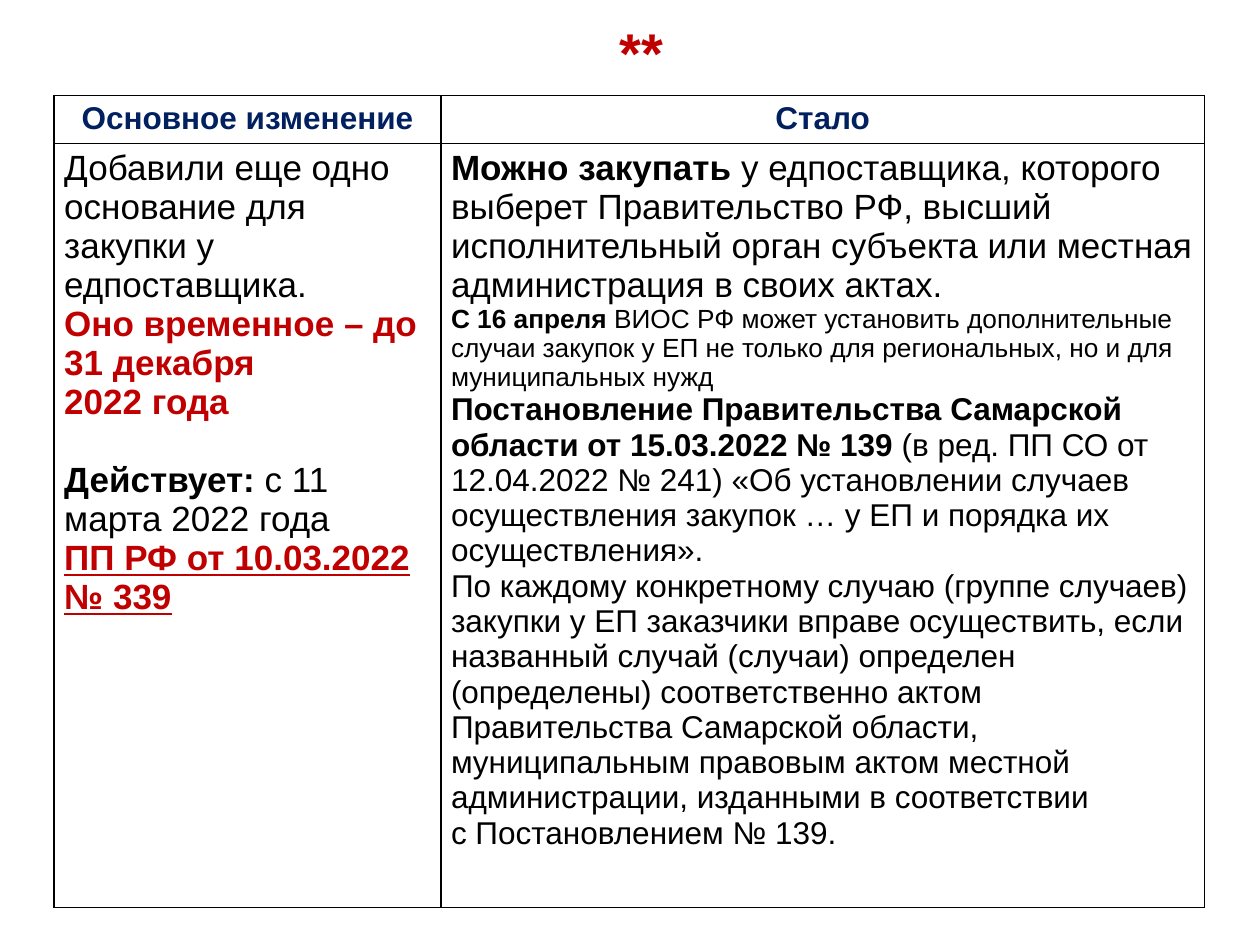
import pptx
import pptx.dml.color
import pptx.enum.text
import pptx.oxml
import pptx.oxml.ns
import pptx.util
from dataclasses import dataclass

Inches = pptx.util.Inches
Pt = pptx.util.Pt
ALIGN = pptx.enum.text.PP_ALIGN
ANCHOR = pptx.enum.text.MSO_ANCHOR


@dataclass(frozen=True)
class Theme:
    font: str = "Arial"
    red: str = "C00000"
    navy: str = "002060"
    black: str = "000000"
    white: str = "FFFFFF"
    title: int = 32
    large: int = 20
    medium: int = 18
    small: int = 15
    border: int = 1


THEME = Theme()


def span(text, size=THEME.large, color=THEME.black, bold=False, underline=False):
    return text, size, color, bold, underline


class Page:
    def __init__(self, deck, theme):
        self.theme = theme
        self.slide = deck.slides.add_slide(deck.slide_layouts[6])

    def add_text(self, frame, paras, align=ALIGN.LEFT, gaps=None):
        """Fill a frame; gaps maps a paragraph index to the points above it."""
        for index, spans in enumerate(paras):
            para = frame.paragraphs[0] if index == 0 else frame.add_paragraph()
            para.alignment = align
            if gaps and index in gaps:
                para.space_before = Pt(gaps[index])
            for text, size, color, bold, underline in spans:
                for number, line in enumerate(text.split("\n")):
                    if number:
                        para.add_line_break()
                    run = para.add_run()
                    run.text = line
                    font = run.font
                    font.name, font.size = self.theme.font, Pt(size)
                    font.bold, font.underline = bold, underline
                    font.color.rgb = pptx.dml.color.RGBColor.from_string(color)

    def text_box(self, left, top, width, height, paras, align):
        box = self.slide.shapes.add_textbox(
            Inches(left), Inches(top), Inches(width), Inches(height))
        frame = box.text_frame
        frame.word_wrap = True
        frame.vertical_anchor = ANCHOR.MIDDLE
        frame.margin_top = frame.margin_bottom = 0
        self.add_text(frame, paras, align)

    def table(self, left, top, widths, heights):
        frame = self.slide.shapes.add_table(
            len(heights), len(widths), Inches(left), Inches(top),
            Inches(sum(widths)), Inches(sum(heights)))
        table = frame.table
        table.first_row = table.horz_banding = False
        for column, width in zip(table.columns, widths):
            column.width = Inches(width)
        for row, height in zip(table.rows, heights):
            row.height = Inches(height)
        return table

    def cell(self, cell, paras, align=ALIGN.LEFT, gaps=None):
        cell.margin_left = cell.margin_right = Inches(0.08)
        cell.margin_top = cell.margin_bottom = Inches(0.04)
        # Borders come before the fill in the cell properties
        properties = cell._tc.get_or_add_tcPr()
        for side in ("lnL", "lnR", "lnT", "lnB"):
            properties.append(pptx.oxml.parse_xml(
                f'<a:{side} {pptx.oxml.ns.nsdecls("a")} w="{Pt(self.theme.border)}">'
                f'<a:solidFill><a:srgbClr val="{self.theme.black}"/></a:solidFill>'
                f'</a:{side}>'))
        cell.fill.solid()
        cell.fill.fore_color.rgb = pptx.dml.color.RGBColor.from_string(self.theme.white)
        self.add_text(cell.text_frame, paras, align, gaps)


def main():
    deck = pptx.Presentation()
    deck.slide_width, deck.slide_height = Inches(10), Inches(7.5)
    page = Page(deck, THEME)

    # Title
    page.text_box(0.59, 0.21, 9, 0.39,
                  [[span("**", THEME.title, THEME.red, True)]], ALIGN.CENTER)

    # Table with its header row
    table = page.table(0.43, 0.76, [3.07, 6.06], [0.36, 5.64])
    for column, heading in enumerate(("Основное изменение", "Стало")):
        page.cell(table.cell(0, column),
                  [[span(heading, THEME.medium, THEME.navy, True)]], ALIGN.CENTER)

    # What was changed
    change = [
        [span("Добавили еще одно основание для закупки у едпоставщика.")],
        [span("Оно временное – до 31 декабря", color=THEME.red, bold=True)],
        [span("2022 года", color=THEME.red, bold=True)],
        [span("Действует: ", bold=True), span("с 11 марта 2022 года")],
        [span("ПП РФ от 10.03.2022 № 339", color=THEME.red, bold=True, underline=True)],
    ]
    page.cell(table.cell(1, 0), change, gaps={3: 22.4})

    # What applies now
    result = [
        [span("Можно закупать", bold=True),
         span(" у едпоставщика, которого выберет Правительство РФ, высший "
              "исполнительный орган субъекта или местная администрация "
              "в своих актах.")],
        [span("С 16 апреля ", THEME.small, bold=True),
         span("ВИОС РФ может установить дополнительные случаи закупок у ЕП "
              "не только для региональных, но и для муниципальных нужд",
              THEME.small)],
        [span("Постановление Правительства Самарской области от 15.03.2022 № 139 ",
              THEME.medium, bold=True),
         span("(в ред. ПП СО от 12.04.2022 № 241) «Об установлении случаев "
              "осуществления закупок … у ЕП и порядка их осуществления».",
              THEME.medium)],
        [span("По каждому конкретному случаю (группе случаев) закупки у ЕП "
              "заказчики вправе осуществить, если названный случай (случаи) "
              "определен (определены) соответственно актом Правительства "
              "Самарской области, муниципальным правовым актом местной "
              "администрации, изданными в соответствии \nс Постановлением № 139.",
              THEME.medium)],
    ]
    page.cell(table.cell(1, 1), result)

    deck.save("out.pptx")


if __name__ == "__main__":
    main()
